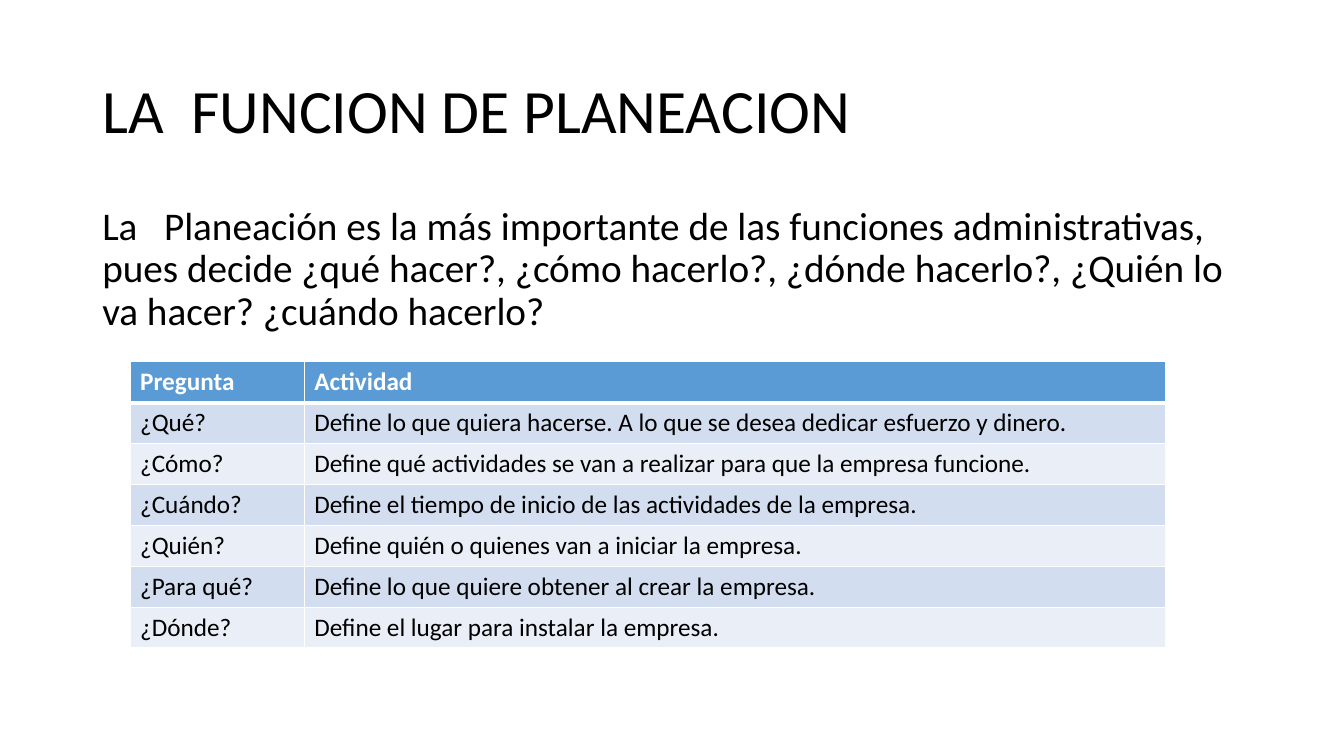
import dataclasses

import lxml.etree
import pptx
import pptx.dml.color
import pptx.enum.text
import pptx.oxml.ns
import pptx.util

Pt = pptx.util.Pt
Anchor = pptx.enum.text.MSO_ANCHOR

FONT = "Calibri"
COLORS = {
    "black": "000000",
    "white": "FFFFFF",
    "header": "5B9BD5",
    "odd": "D2DEEF",
    "even": "EAEFF7",
}
TABLE_LEFT, TABLE_TOP = 92.9, 258.5
COLUMN_WIDTHS = (124.5, 615.5)
ROW_HEIGHT = 29.2
THIN, THICK = 1, 3


@dataclasses.dataclass
class TextBlock:
    text: str
    top: float
    height: float
    size: float
    anchor: Anchor
    space_before: float = 0


@dataclasses.dataclass
class Row:
    question: str
    activity: str


BLOCKS = [
    TextBlock("LA  FUNCION DE PLANEACION", 28.8, 104.4, 44, Anchor.MIDDLE),
    TextBlock(
        "La   Planeación es la más importante de las funciones administrativas, "
        "pues decide ¿qué hacer?, ¿cómo hacerlo?, ¿dónde hacerlo?, ¿Quién lo "
        "va hacer? ¿cuándo hacerlo?",
        144, 342.7, 28, Anchor.TOP, 10,
    ),
]
ROWS = [
    Row("Pregunta", "Actividad"),
    Row("¿Qué?", "Define lo que quiera hacerse. A lo que se desea dedicar esfuerzo y dinero."),
    Row("¿Cómo?", "Define qué actividades se van a realizar para que la empresa funcione."),
    Row("¿Cuándo?", "Define el tiempo de inicio de las actividades de la empresa."),
    Row("¿Quién?", "Define quién o quienes van a iniciar la empresa."),
    Row("¿Para qué?", "Define lo que quiere obtener al crear la empresa."),
    Row("¿Dónde?", "Define el lugar para instalar la empresa."),
]


def rgb(name: str) -> pptx.dml.color.RGBColor:
    return pptx.dml.color.RGBColor.from_string(COLORS[name])


def set_font(p, size: float, color: str, bold: bool = False) -> None:
    p.font.name = FONT
    p.font.size = Pt(size)
    p.font.bold = bold
    p.font.color.rgb = rgb(color)


def add_text(s, block: TextBlock) -> None:
    sp = s.shapes.add_textbox(Pt(66), Pt(block.top), Pt(828), Pt(block.height))
    tf = sp.text_frame
    tf.word_wrap = True
    tf.vertical_anchor = block.anchor
    p = tf.paragraphs[0]
    p.text = block.text
    p.line_spacing = 0.9
    p.space_before = Pt(block.space_before)
    set_font(p, block.size, "black")


def set_borders(cell, top: float, bottom: float) -> None:
    qn = pptx.oxml.ns.qn
    tcPr = cell.fill._xPr
    widths = {"a:lnL": THIN, "a:lnR": THIN, "a:lnT": top, "a:lnB": bottom}
    for i, (tag, width) in enumerate(widths.items()):
        ln = lxml.etree.Element(qn(tag), w=str(Pt(width)))
        fill = lxml.etree.SubElement(ln, qn("a:solidFill"))
        lxml.etree.SubElement(fill, qn("a:srgbClr"), val=COLORS["white"])
        tcPr.insert(i, ln)


def style_cell(cell, text: str, row: int) -> None:
    header = row == 0
    cell.fill.solid()
    cell.fill.fore_color.rgb = rgb("header" if header else "odd" if row % 2 else "even")
    set_borders(cell, THICK if row == 1 else THIN, THICK if header else THIN)
    p = cell.text_frame.paragraphs[0]
    p.text = text
    set_font(p, 18, "white" if header else "black", header)


def add_question_table(s) -> None:
    table = s.shapes.add_table(
        len(ROWS), len(COLUMN_WIDTHS), Pt(TABLE_LEFT), Pt(TABLE_TOP),
        Pt(sum(COLUMN_WIDTHS)), Pt(ROW_HEIGHT * len(ROWS)),
    ).table
    for column, width in zip(table.columns, COLUMN_WIDTHS):
        column.width = Pt(width)
    for i, row in enumerate(ROWS):
        table.rows[i].height = Pt(ROW_HEIGHT)
        for j, text in enumerate((row.question, row.activity)):
            style_cell(table.cell(i, j), text, i)


def main() -> None:
    prs = pptx.Presentation()
    prs.slide_width, prs.slide_height = Pt(960), Pt(540)
    s = prs.slides.add_slide(prs.slide_layouts[6])
    for block in BLOCKS:
        add_text(s, block)
    add_question_table(s)
    prs.save("out.pptx")


if __name__ == "__main__":
    main()
